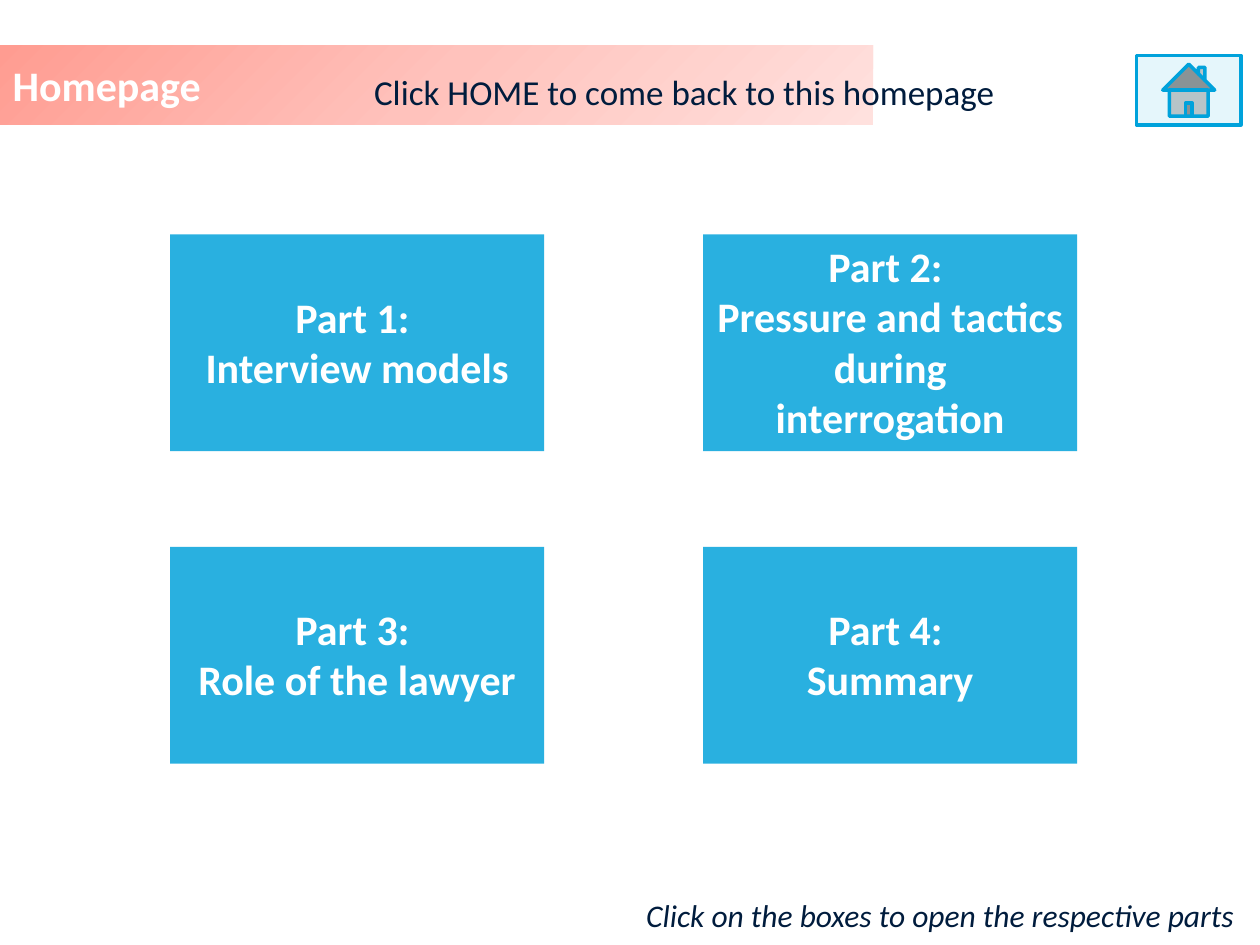
from dataclasses import dataclass

from lxml.etree import SubElement
from pptx import Presentation
from pptx.dml.color import RGBColor
from pptx.enum.shapes import MSO_SHAPE as Preset
from pptx.enum.text import MSO_ANCHOR as Anchor, MSO_AUTO_SIZE as AutoSize, PP_ALIGN as Align
from pptx.oxml import parse_xml
from pptx.oxml.ns import nsdecls, qn
from pptx.shapes.autoshape import Shape
from pptx.slide import Slide
from pptx.text.text import TextFrame
from pptx.util import Inches, Pt

SLIDE_WIDTH, SLIDE_HEIGHT = Inches(10), Inches(7.5)
COLUMNS, ROWS = 100, 75
FONT = "Calibri"
NAVY = RGBColor(0x00, 0x1C, 0x3D)
BLUE = RGBColor(0x00, 0xA2, 0xDB)
PALE_BLUE = RGBColor(0xE5, 0xF6, 0xFB)
WHITE = RGBColor(0xFF, 0xFF, 0xFF)
BANNER_STOPS = (
    (0, RGBColor(0xFF, 0x9C, 0x91)),
    (50, RGBColor(0xFF, 0xC2, 0xBC)),
    (100, RGBColor(0xFF, 0xE1, 0xDE)),
)


@dataclass(frozen=True)
class Area:
    """A rectangle in columns and rows of the slide grid."""

    left: float
    top: float
    width: float
    height: float

    def lengths(self) -> tuple[int, int, int, int]:
        """Return left, top, width and height as slide lengths."""
        column, row = SLIDE_WIDTH / COLUMNS, SLIDE_HEIGHT / ROWS
        return (round(self.left * column), round(self.top * row),
                round(self.width * column), round(self.height * row))


@dataclass(frozen=True)
class Style:
    """The look of a run of text."""

    size: int
    color: RGBColor
    bold: bool = False
    italic: bool = False


@dataclass(frozen=True)
class Part:
    """A box that leads to one part of the course."""

    heading: str
    topic: str
    lines_above: int = 1


HEADING = Style(24, WHITE, bold=True)
HINT = Style(20, NAVY)
FOOTNOTE = Style(18, NAVY, italic=True)
FIRST_BOX = Area(13.5, 18.6, 29.7, 17.2)
BOX_COLUMN_STEP, BOX_ROW_STEP = 42.3, 24.8
BOX_OPACITY = 84
PARTS = (
    Part("Part 1: ", "Interview models"),
    Part("Part 2: ", "Pressure and tactics during interrogation", lines_above=0),
    Part("Part 3: ", "Role of the lawyer"),
    Part("Part 4: ", "Summary"),
)


def write_lines(frame: TextFrame, lines: tuple[str, ...], style: Style, align: Align) -> None:
    """Write each line as a paragraph with one styled run."""
    for index, line in enumerate(lines):
        paragraph = frame.add_paragraph() if index else frame.paragraphs[0]
        paragraph.alignment = align
        run = paragraph.add_run()
        run.text = line
        font = run.font
        font.name, font.size, font.color.rgb = FONT, Pt(style.size), style.color
        font.bold, font.italic = style.bold, style.italic


def add_preset(slide: Slide, preset: Preset, area: Area, color: RGBColor) -> Shape:
    """Add a flat, filled preset shape."""
    shape = slide.shapes.add_shape(preset, *area.lengths())
    shape.shadow.inherit = False
    shape.fill.solid()
    shape.fill.fore_color.rgb = color
    return shape


def add_text(slide: Slide, area: Area, text: str, style: Style, wrap: bool) -> None:
    """Add a text box holding a single line of text."""
    frame = slide.shapes.add_textbox(*area.lengths()).text_frame
    frame.word_wrap = wrap
    write_lines(frame, (text,), style, Align.LEFT)


def format_title(slide: Slide, area: Area, text: str) -> None:
    """Turn the title placeholder into an arrow-ended gradient banner."""
    title = slide.shapes.title
    title.left, title.top, title.width, title.height = area.lengths()
    stops = "".join(
        f'<a:gs pos="{position * 1000}"><a:srgbClr val="{color}"/></a:gs>'
        for position, color in BANNER_STOPS
    )
    properties = title.element.spPr
    properties.append(parse_xml(f'<a:prstGeom {nsdecls("a")} prst="homePlate"><a:avLst/></a:prstGeom>'))
    properties.append(parse_xml(
        f'<a:gradFill {nsdecls("a")} rotWithShape="1"><a:gsLst>{stops}</a:gsLst>'
        '<a:path path="circle"><a:fillToRect r="100000" b="100000"/></a:path></a:gradFill>'
    ))
    frame = title.text_frame
    frame.auto_size, frame.vertical_anchor = AutoSize.NONE, Anchor.MIDDLE
    write_lines(frame, (text,), HEADING, Align.LEFT)


def add_home_button(slide: Slide, area: Area) -> None:
    """Add the outlined home button."""
    button = add_preset(slide, Preset.ACTION_BUTTON_HOME, area, PALE_BLUE)
    button.line.color.rgb = BLUE
    button.line.width = Pt(2)


def add_part(slide: Slide, part: Part, index: int) -> None:
    """Add a part box at its place in the two by two grid."""
    row, column = divmod(index, 2)
    area = Area(FIRST_BOX.left + column * BOX_COLUMN_STEP, FIRST_BOX.top + row * BOX_ROW_STEP,
                FIRST_BOX.width, FIRST_BOX.height)
    box = add_preset(slide, Preset.RECTANGLE, area, BLUE)
    box.line.fill.background()
    color = box.element.spPr.find(qn("a:solidFill")).find(qn("a:srgbClr"))
    SubElement(color, qn("a:alpha")).set("val", str(BOX_OPACITY * 1000))
    frame = box.text_frame
    frame.word_wrap, frame.vertical_anchor = True, Anchor.TOP
    frame.margin_top = Inches(0.05 + 0.4 * part.lines_above)
    write_lines(frame, (part.heading, part.topic), HEADING, Align.CENTER)


def main() -> None:
    """Build the homepage slide and save it."""
    presentation = Presentation()
    presentation.slide_width, presentation.slide_height = SLIDE_WIDTH, SLIDE_HEIGHT
    slide = presentation.slides.add_slide(presentation.slide_layouts.get_by_name("Title Only"))
    format_title(slide, Area(0, 3.6, 69.3, 6.3), "Homepage")
    add_text(slide, Area(28.7, 5.1, 70.5, 4.4), "Click HOME to come back to this homepage", HINT, True)
    add_home_button(slide, Area(90.2, 4.4, 8.3, 5.5))
    for index, part in enumerate(PARTS):
        add_part(slide, part, index)
    add_text(slide, Area(50.3, 70.6, 49.2, 4), "Click on the boxes to open the respective parts", FOOTNOTE, False)
    presentation.save("out.pptx")


if __name__ == "__main__":
    main()
